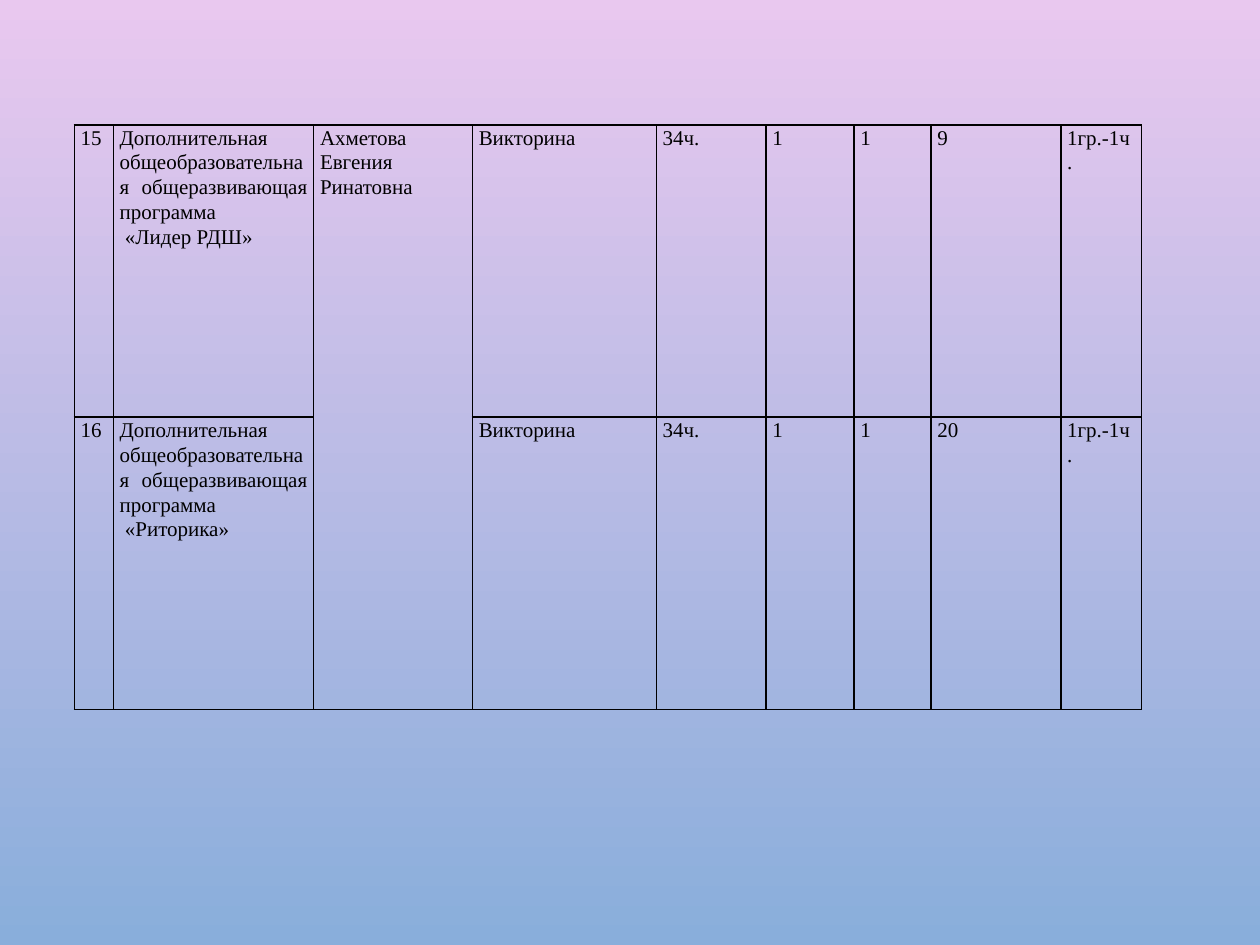
"""Build a slide with a table of extra-curricular programmes."""
from dataclasses import dataclass

from lxml import etree
from pptx import Presentation, dml, table as tb, util as u
from pptx.dml import color
from pptx.enum import text
from pptx.oxml import ns

HUES = {"top": "E9C8EF", "base": "89AEDB", "ink": "000000"}
COLS = [0.31, 1.59, 1.26, 1.46, 0.87, 0.7, 0.61, 1.03, 0.64]
HIGH = 2.32
COURSE = "Дополнительная общеобразовательная общеразвивающая программа"


@dataclass
class Course:
    """One programme row."""
    num: str
    name: str
    head: str
    size: str

    def cells(self) -> list[str]:
        """Return the texts of the row from left to right."""
        return [self.num, f"{COURSE}\n «{self.name}»", self.head, "Викторина",
                "34ч.", "1", "1", self.size, "1гр.-1ч."]


ROWS = [Course("15", "Лидер РДШ", "Ахметова Евгения Ринатовна", "9"),
        Course("16", "Риторика", "", "20")]


def hue(name: str) -> color.RGBColor:
    """Look up a colour by name."""
    return color.RGBColor.from_string(HUES[name])


def frame(cell: tb._Cell) -> None:
    """Draw a one-point line on each side of a cell."""
    props = cell._tc.get_or_add_tcPr()
    for spot, side in enumerate(("lnL", "lnR", "lnT", "lnB")):
        line = etree.Element(ns.qn(f"a:{side}"), w=str(u.Pt(1)))
        fill = etree.SubElement(line, ns.qn("a:solidFill"))
        etree.SubElement(fill, ns.qn("a:srgbClr"), val=HUES["ink"])
        props.insert(spot, line)


def write(cell: tb._Cell, words: str) -> None:
    """Fill a cell with justified text and frame it."""
    cell.fill.background()
    frame(cell)
    cell.margin_left = cell.margin_right = u.Inches(0.05)
    cell.margin_top = cell.margin_bottom = 0
    cell.text = words
    for para in cell.text_frame.paragraphs:
        para.alignment = text.PP_ALIGN.JUSTIFY
        para.line_spacing = 1.07
        para.font.name = "Times New Roman"
        para.font.size = u.Pt(12)
        para.font.color.rgb = hue("ink")


def main() -> None:
    """Make the slide and save it."""
    deck = Presentation()
    deck.slide_width, deck.slide_height = u.Inches(10), u.Inches(7.5)
    slide = deck.slides.add_slide(deck.slide_layouts[6])

    back = slide.background.fill
    back.gradient()
    back.gradient_angle = 270
    for stop, name in zip(back.gradient_stops, ("top", "base")):
        stop.color.rgb = hue(name)

    grid = slide.shapes.add_table(
        len(ROWS), len(COLS), u.Inches(0.59), u.Inches(0.99),
        u.Inches(sum(COLS)), u.Inches(HIGH * len(ROWS))).table
    grid.first_row = grid.horz_banding = False
    for col, wide in zip(grid.columns, COLS):
        col.width = u.Inches(wide)
    for row, course in zip(grid.rows, ROWS):
        row.height = u.Inches(HIGH)
        for cell, words in zip(row.cells, course.cells()):
            write(cell, words)
    grid.cell(0, 2).merge(grid.cell(1, 2))

    deck.save("out.pptx")


if __name__ == "__main__":
    main()
